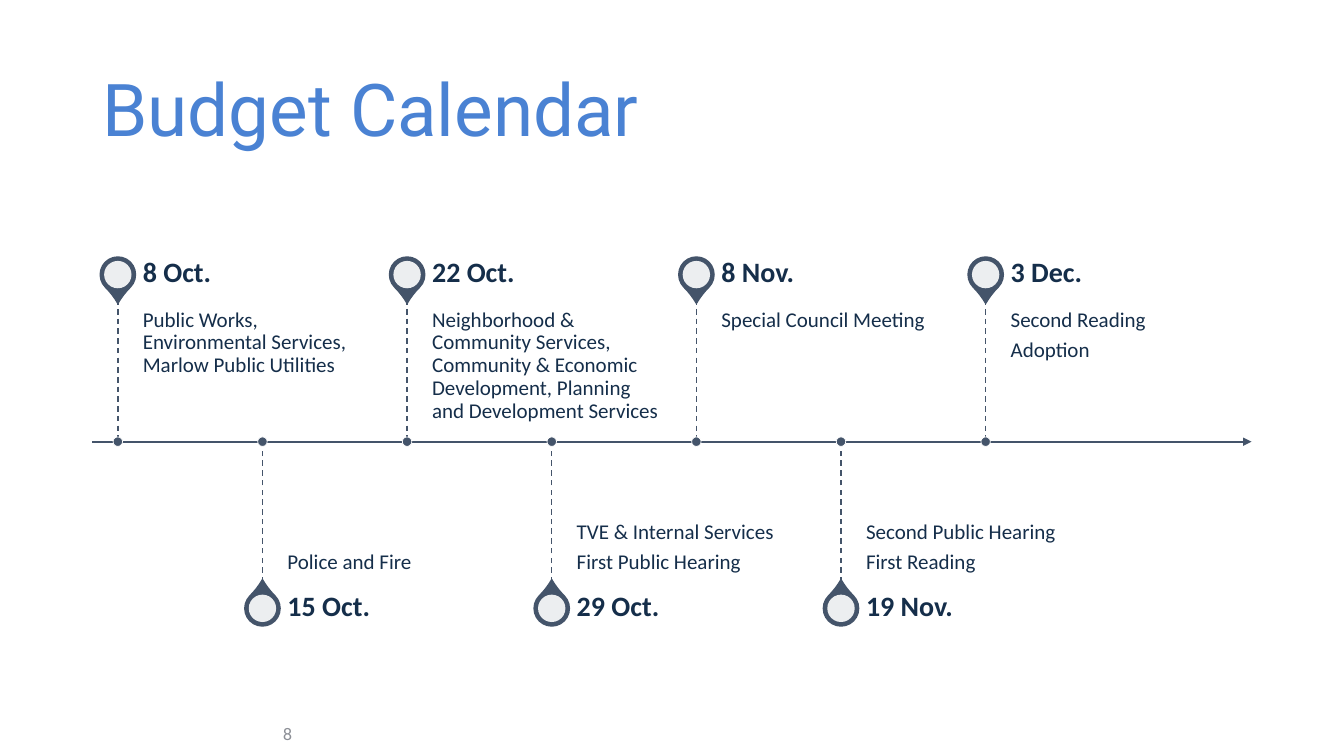
from lxml.etree import SubElement as Sub
from pptx import Presentation
from pptx.dml.color import RGBColor as Rgb
from pptx.enum.dml import MSO_LINE
from pptx.enum.shapes import MSO_CONNECTOR, MSO_SHAPE
from pptx.enum.text import MSO_ANCHOR as Anchor, MSO_AUTO_SIZE as Fit, PP_ALIGN as Align
from pptx.oxml.ns import qn
from pptx.util import Cm, Pt

COLORS = {
    "title": "4A82D3",
    "slate": "44546A",
    "navy": "152E4A",
    "gray": "8C8F96",
    "white": "FFFFFF",
}

EVENTS = [
    ("8 Oct.", "Public Works, Environmental Services, Marlow Public Utilities"),
    ("15 Oct.", "Police and Fire"),
    ("22 Oct.", "Neighborhood & Community Services, Community & Economic "
                "Development, Planning and Development Services"),
    ("29 Oct.", "TVE & Internal Services\nFirst Public Hearing"),
    ("8 Nov.", "Special Council Meeting"),
    ("19 Nov.", "Second Public Hearing\nFirst Reading"),
    ("3 Dec.", "Second Reading\nAdoption"),
]

AXIS = 11.13      # height of the time axis, in cm like all lengths below
FIRST = 2.97      # first event
STEP = 3.645      # from one event to the next
INDENT = 0.63     # from stem to text
WIDTH = 6.07      # text width


def color(name):
    return Rgb.from_string(COLORS[name])


class Board:
    def __init__(self, slide):
        self.slide = slide
        self.shapes = slide.shapes

    def style(self, frame, size, tint, font="Calibri", bold=False, after=0,
              align=Align.LEFT, lines=0.9):
        for para in frame.paragraphs:
            para.alignment = align
            para.line_spacing = lines
            para.space_before = Pt(0)
            para.space_after = Pt(after)
            for run in para.runs:
                run.font.name = font
                run.font.size = Pt(size)
                run.font.bold = bold
                run.font.color.rgb = color(tint)

    def title(self, text, x, y, w, h):
        box = self.shapes.title
        box.left, box.top, box.width, box.height = Cm(x), Cm(y), Cm(w), Cm(h)
        frame = box.text_frame
        frame.text = text
        frame.auto_size = Fit.NONE
        frame.vertical_anchor = Anchor.MIDDLE
        self.style(frame, 52, "title", "Roboto")

    def text(self, text, x, y, w, h, anchor, pads, **look):
        """Add a text box; pads are left, top, right and bottom in cm."""
        frame = self.shapes.add_textbox(Cm(x), Cm(y), Cm(w), Cm(h)).text_frame
        frame.word_wrap = True
        frame.auto_size = Fit.NONE
        frame.vertical_anchor = anchor
        (frame.margin_left, frame.margin_top,
         frame.margin_right, frame.margin_bottom) = map(Cm, pads)
        frame.text = text
        self.style(frame, **look)

    def line(self, x1, y1, x2, y2, width, dash=False, arrow=False):
        link = self.shapes.add_connector(
            MSO_CONNECTOR.STRAIGHT, Cm(x1), Cm(y1), Cm(x2), Cm(y2))
        link.line.color.rgb = color("slate")
        link.line.width = Pt(width)
        if dash:
            link.line.dash_style = MSO_LINE.DASH
        if arrow:
            Sub(link.line._get_or_add_ln(), qn("a:tailEnd"), type="triangle")
        Sub(link._element.spPr, qn("a:effectLst"))

    def round(self, kind, x, y, size, fill, edge=None, width=1.0):
        """Add a shape of equal width and height, centred on x, y."""
        shape = self.shapes.add_shape(
            kind, Cm(x - size / 2), Cm(y - size / 2), Cm(size), Cm(size))
        shape.shadow.inherit = False
        shape.fill.solid()
        shape.fill.fore_color.rgb = color(fill)
        if edge:
            shape.line.color.rgb = color(edge)
            shape.line.width = Pt(width)
        else:
            shape.line.fill.background()
        return shape

    def pin(self, x, y, angle):
        drop = self.round(MSO_SHAPE.TEAR, x, y, 0.89, "slate", "slate")
        drop.adjustments[0] = 1.15
        drop.rotation = angle
        hole = self.round(MSO_SHAPE.OVAL, x, y, 0.69, "white")
        tint = hole._element.spPr.find(".//" + qn("a:srgbClr"))
        Sub(tint, qn("a:alpha"), val="90000")

    def event(self, x, date, note, above):
        if above:
            pin, angle, head, body, tip = 6.92, 135, 6.27, 7.54, 7.54
            anchor, pads = Anchor.TOP, (0, 0.25, 0.25, 0.41)
        else:
            pin, angle, head, body, tip = 15.33, 315, 14.68, AXIS, 14.68
            anchor, pads = Anchor.BOTTOM, (0, 0.41, 0, 0.25)
        self.pin(x, pin, angle)
        left = x + INDENT
        self.text(note, left, body, WIDTH, 3.58, anchor, pads,
                  size=15, tint="navy", after=5.25)
        self.text(date, left, head, WIDTH, 1.24, Anchor.MIDDLE,
                  (0, 0, 0.36, 0), size=20, tint="navy", bold=True)
        self.line(x, tip, x, AXIS, 1, dash=True)
        self.round(MSO_SHAPE.OVAL, x, AXIS, 0.24, "slate", "white", 0.5)


def main():
    deck = Presentation()
    deck.slide_width, deck.slide_height = Cm(33.87), Cm(19.05)
    board = Board(deck.slides.add_slide(deck.slide_layouts[5]))
    board.title("Budget Calendar", 2.33, 1.01, 29.21, 3.68)
    board.text("8", 0, 17.98, 7.62, 1.01, Anchor.MIDDLE,
               (0.25, 0.13, 0.25, 0.13), size=12, tint="gray", font="Roboto",
               align=Align.RIGHT, after=6, lines=1.0)
    board.line(2.33, AXIS, 31.54, AXIS, 1.5, arrow=True)
    for i, (date, note) in enumerate(EVENTS):
        board.event(FIRST + i * STEP, date, note, above=i % 2 == 0)
    deck.save("out.pptx")


if __name__ == "__main__":
    main()
